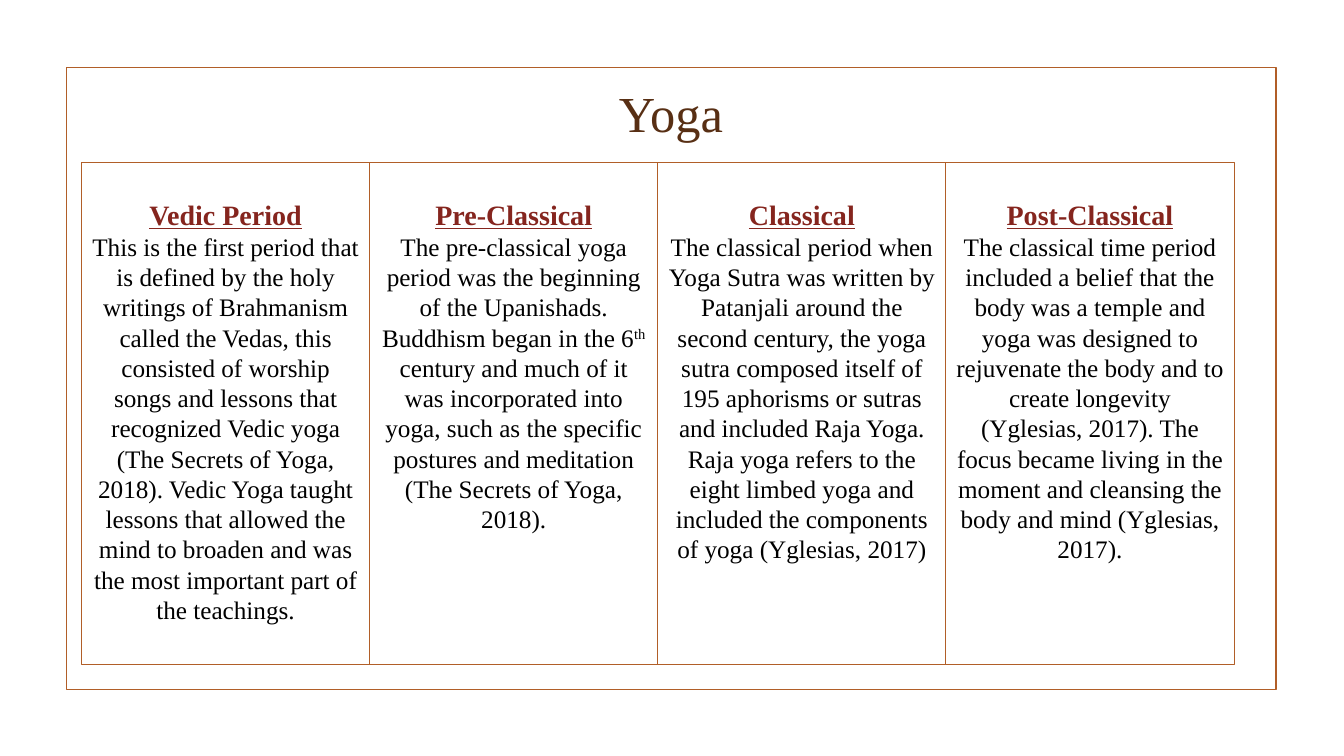
from dataclasses import dataclass

from pptx import Presentation
from pptx.dml.color import RGBColor
from pptx.enum import shapes, text
from pptx.util import Inches, Pt


@dataclass(frozen=True)
class Theme:
    font: str = "Times New Roman"
    border: str = "B15E28"
    title: str = "582F14"
    heading: str = "85251E"
    body: str = "000000"
    title_size: int = 36
    heading_size: int = 20
    body_size: int = 18


THEME = Theme()

PERIODS = [
    ("Vedic Period", [
        "This is the first period that is defined by the holy writings of Brahmanism "
        "called the Vedas, this consisted of worship songs and lessons that recognized "
        "Vedic yoga (The Secrets of Yoga, 2018). Vedic Yoga taught lessons that allowed "
        "the mind to broaden and was the most important part of the teachings."]),
    ("Pre-Classical", [
        "The pre-classical yoga period was the beginning of the Upanishads. Buddhism "
        "began in the 6",
        "th",
        " century and much of it was incorporated into yoga, such as the specific "
        "postures and meditation (The Secrets of Yoga, 2018)."]),
    ("Classical", [
        "The classical period when Yoga Sutra was written by Patanjali around the second "
        "century, the yoga sutra composed itself of 195 aphorisms or sutras and included "
        "Raja Yoga. Raja yoga refers to the eight limbed yoga and included the components "
        "of yoga (Yglesias, 2017)"]),
    ("Post-Classical", [
        "The classical time period included a belief that the body was a temple and yoga "
        "was designed to rejuvenate the body and to create longevity (Yglesias, 2017). "
        "The focus became living in the moment and cleansing the body and mind "
        "(Yglesias, 2017)."]),
]


def add_text(paragraph, content, size, color, bold=False, underline=False, baseline=None):
    run = paragraph.add_run()
    run.text = content
    run.font.name = THEME.font
    run.font.size = Pt(size)
    run.font.color.rgb = RGBColor.from_string(color)
    run.font.bold = bold
    run.font.underline = underline
    if baseline:
        run.font._element.set("baseline", str(baseline))


def add_outline(slide, left, top, width, height, line_width):
    shape = slide.shapes.add_shape(
        shapes.MSO_SHAPE.RECTANGLE,
        Inches(left), Inches(top), Inches(width), Inches(height))
    shape.shadow.inherit = False
    shape.fill.background()
    shape.line.color.rgb = RGBColor.from_string(THEME.border)
    shape.line.width = Pt(line_width)
    return shape


def add_title(slide, content):
    box = slide.shapes.add_textbox(Inches(6.04), Inches(0.77), Inches(5.8), Inches(0.71))
    box.text_frame.word_wrap = True
    paragraph = box.text_frame.paragraphs[0]
    paragraph.alignment = text.PP_ALIGN.LEFT
    add_text(paragraph, content, THEME.title_size, THEME.title)


def add_period(slide, left, width, heading, parts):
    frame = add_outline(slide, left, 1.61, width, 4.98, 0.75).text_frame
    frame.word_wrap = True
    frame.vertical_anchor = text.MSO_ANCHOR.TOP
    frame.margin_top = Inches(0.35)

    heading_paragraph = frame.paragraphs[0]
    heading_paragraph.alignment = text.PP_ALIGN.CENTER
    add_text(heading_paragraph, heading, THEME.heading_size, THEME.heading,
             bold=True, underline=True)

    body_paragraph = frame.add_paragraph()
    body_paragraph.alignment = text.PP_ALIGN.CENTER
    for index, part in enumerate(parts):
        add_text(body_paragraph, part, THEME.body_size, THEME.body,
                 baseline=30000 if index % 2 else None)


def main():
    presentation = Presentation()
    presentation.slide_width = Inches(13.33)
    presentation.slide_height = Inches(7.5)
    slide = presentation.slides.add_slide(presentation.slide_layouts[6])

    add_outline(slide, 0.66, 0.67, 12, 6.17, 1.25)
    add_title(slide, "Yoga")
    left, right = 0.81, 12.24
    column_width = (right - left) / len(PERIODS)
    for column, (heading, parts) in enumerate(PERIODS):
        add_period(slide, left + column * column_width, column_width, heading, parts)

    presentation.save("out.pptx")


if __name__ == "__main__":
    main()
